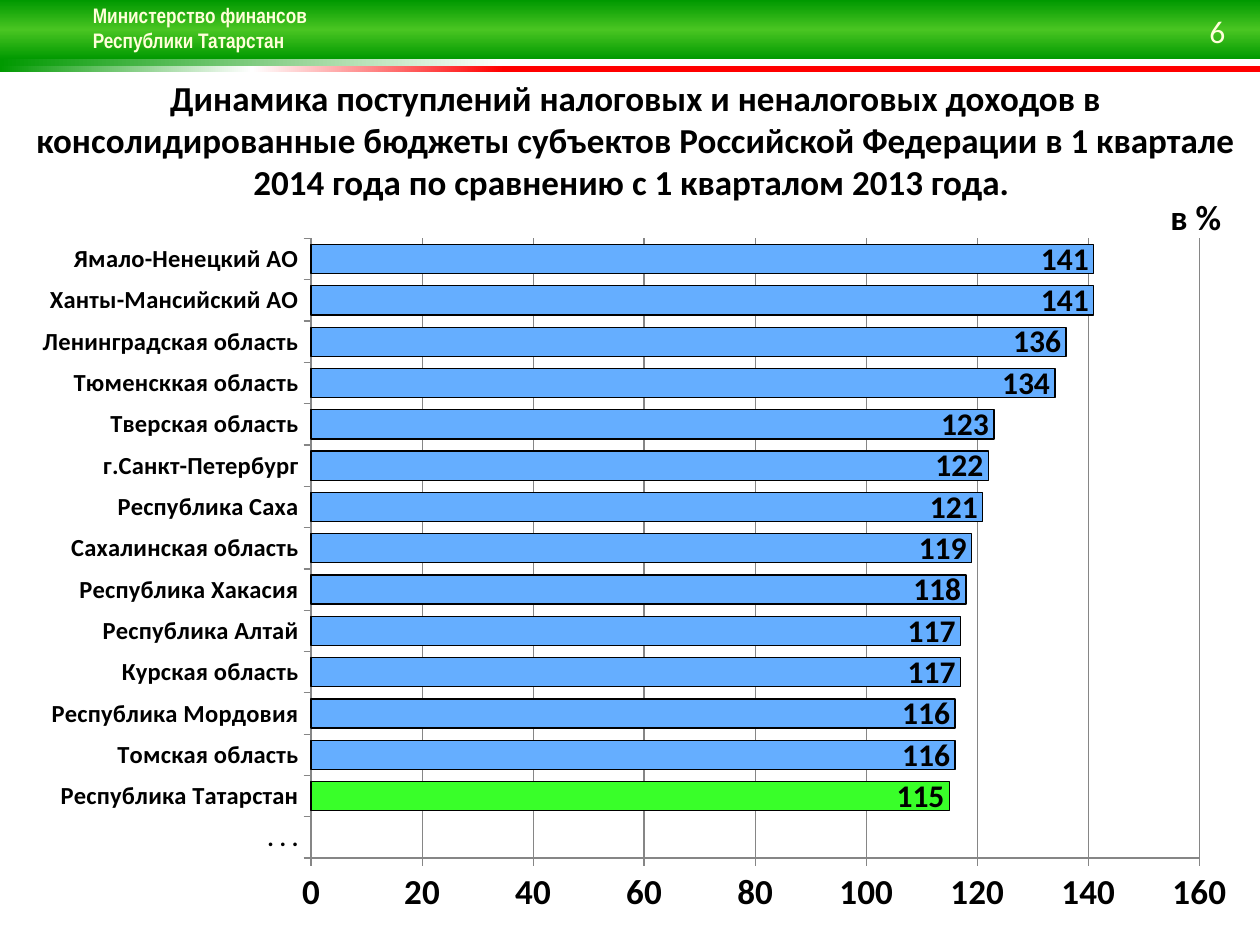
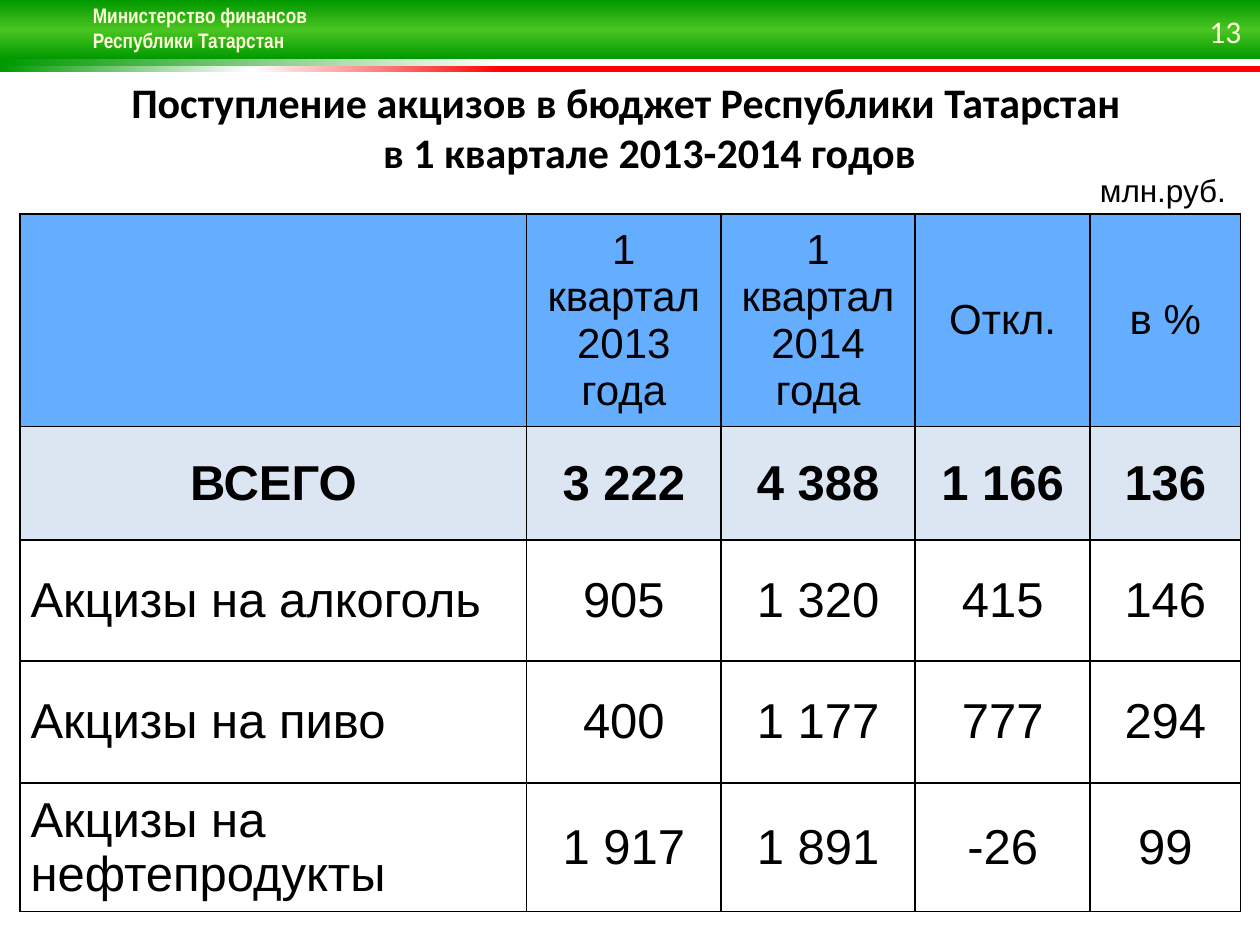
from dataclasses import dataclass

from lxml import etree
from pptx import Presentation
from pptx.chart.data import CategoryChartData
from pptx.dml.color import RGBColor
from pptx.enum.chart import XL_CHART_TYPE, XL_LABEL_POSITION, XL_TICK_LABEL_POSITION, XL_TICK_MARK
from pptx.enum.shapes import MSO_SHAPE
from pptx.enum.text import MSO_ANCHOR, PP_ALIGN
from pptx.oxml import parse_xml
from pptx.oxml.ns import nsdecls, qn
from pptx.util import Pt

RECT = MSO_SHAPE.RECTANGLE
BAR = XL_CHART_TYPE.BAR_STACKED
INSIDE_END = XL_LABEL_POSITION.INSIDE_END
LOW = XL_TICK_LABEL_POSITION.LOW
TICK_OUT, TICK_NONE = XL_TICK_MARK.OUTSIDE, XL_TICK_MARK.NONE
LEFT, CENTER = PP_ALIGN.LEFT, PP_ALIGN.CENTER
MIDDLE = MSO_ANCHOR.MIDDLE


@dataclass(frozen=True)
class Theme:
    black: str = "000000"
    white: str = "FFFFFF"
    cream: str = "FFFFD9"
    green: str = "009900"
    lime: str = "49C522"
    red: str = "FF0000"
    blue: str = "65AEFF"
    pale: str = "DCE6F2"
    accent: str = "39FF29"
    grid: str = "868686"
    sans: str = "Calibri"
    body: str = "Arial"
    narrow: str = "Arial Narrow"
    tiny: int = 12
    small: int = 14
    normal: int = 18
    large: int = 20
    head: int = 24
    figure: int = 28


class Deck:
    def __init__(self, theme):
        self.t = theme
        self.prs = Presentation()
        self.prs.slide_width, self.prs.slide_height = Pt(720), Pt(540)
        self.s = None

    def style(self, font, size, color=None, bold=False, name=None):
        font.name = name or self.t.sans
        font.size = Pt(size)
        font.bold = bold
        font.color.rgb = RGBColor.from_string(color or self.t.black)

    def slide(self, number):
        t = self.t
        self.s = self.prs.slides.add_slide(self.prs.slide_layouts[6])
        self.band(34, 3.6, 180, [(0, t.white), (60, t.white), (100, t.green)])
        self.band(37.6, 3.6, 180, [(60, t.red), (80, t.white), (100, t.green)])
        self.band(0, 34, 270, [(0, t.green), (50, t.lime), (100, t.green)])
        p = self.text("Министерство финансов\vРеспублики Татарстан", 46, -2, 138, 51,
                      t.tiny, t.cream, True, t.narrow)
        for r in p.runs:
            self.text_shadow(r)
        self.text(str(number), 684, 3.6, 34, 24.5, t.normal, t.cream, hang=27)

    def band(self, y, h, angle, stops):
        sp = self.s.shapes.add_shape(RECT, 0, Pt(y), Pt(720), Pt(h))
        sp.shadow.inherit = False
        sp.line.fill.background()
        sp.fill.gradient()
        sp.fill.gradient_angle = angle
        stop_list = sp._element.spPr.find(".//" + qn("a:gsLst"))
        for stop in list(stop_list):
            stop_list.remove(stop)
        for pos, color in stops:
            stop = etree.SubElement(stop_list, qn("a:gs"), pos=str(pos * 1000))
            etree.SubElement(stop, qn("a:srgbClr"), val=color)

    def text_shadow(self, r):
        fill = r._r.get_or_add_rPr().find(qn("a:solidFill"))
        fill.addnext(parse_xml(
            f'<a:effectLst {nsdecls("a")}><a:outerShdw blurRad="38100" dist="38100" dir="2700000">'
            f'<a:srgbClr val="{self.t.black}"><a:alpha val="60000"/></a:srgbClr>'
            '</a:outerShdw></a:effectLst>'))

    def text(self, text, x, y, w, h, size, color=None, bold=False, name=None,
             align=LEFT, margin=0, hang=0, wrap=True):
        tf = self.s.shapes.add_textbox(Pt(x), Pt(y), Pt(w), Pt(h)).text_frame
        tf.word_wrap = wrap
        p = tf.paragraphs[0]
        p.text = text
        p.alignment = align
        if margin or hang:
            pPr = p._p.get_or_add_pPr()
            pPr.set("marL", str(Pt(margin or hang)))
            pPr.set("indent", str(Pt(-hang)))
        for r in p.runs:
            self.style(r.font, size, color, bold, name)
        return p

    def title(self, text, x, w, h, size, **indents):
        self.text(text, x, 40, w, h, size, bold=True, align=CENTER, **indents)

    def axis(self, axis, size):
        axis.major_tick_mark, axis.minor_tick_mark = TICK_OUT, TICK_NONE
        axis.tick_label_position = LOW
        axis.format.line.color.rgb = RGBColor.from_string(self.t.grid)
        self.style(axis.tick_labels.font, size, bold=True)

    def bar_chart(self, rows, highlighted, x, y, w, h, plot):
        t = self.t
        data = CategoryChartData(number_format="0")
        data.categories = [name for name, _ in rows]
        data.add_series("Series 1", [value for _, value in rows])
        chart = self.s.shapes.add_chart(BAR, Pt(x), Pt(y), Pt(w), Pt(h), data).chart
        chart.has_title = chart.has_legend = False
        self.style(chart.font, t.normal)

        self.axis(chart.category_axis, t.small)
        values = chart.value_axis
        self.axis(values, t.large)
        values.minimum_scale, values.maximum_scale, values.major_unit = 0, 160, 20
        values.tick_labels.number_format = "0"
        values.tick_labels.number_format_is_linked = False
        values.major_gridlines.format.line.color.rgb = RGBColor.from_string(t.grid)

        bars = chart.plots[0]
        bars.gap_width, bars.overlap = 42, 100
        bars.vary_by_categories = False
        series = bars.series[0]
        self.bar_format(series.format, t.blue)
        for i in highlighted:
            self.bar_format(series.points[i].format, t.accent)
        labels = series.data_labels
        labels.show_value = True
        labels.position = INSIDE_END
        labels.number_format, labels.number_format_is_linked = "0", False
        self.style(labels.font, t.normal, bold=True)
        self.plot_layout(chart, plot)

    def bar_format(self, fmt, color):
        fmt.fill.solid()
        fmt.fill.fore_color.rgb = RGBColor.from_string(color)
        fmt.line.color.rgb = RGBColor.from_string(self.t.black)
        fmt.line.width = Pt(0.75)

    def plot_layout(self, chart, plot):
        area = chart._chartSpace.find(".//" + qn("c:plotArea"))
        for old in area.findall(qn("c:layout")):
            area.remove(old)
        layout = etree.Element(qn("c:layout"))
        manual = etree.SubElement(layout, qn("c:manualLayout"))
        fields = [("layoutTarget", "inner"), ("xMode", "edge"), ("yMode", "edge")]
        for tag, val in fields + list(zip("xywh", plot)):
            etree.SubElement(manual, qn("c:" + tag), val=str(val))
        area.insert(0, layout)

    def table(self, rows, x, y, widths, heights):
        t = self.t
        frame = self.s.shapes.add_table(len(rows), len(widths), Pt(x), Pt(y),
                                        Pt(sum(widths)), Pt(sum(heights)))
        table = frame.table
        table.first_row = table.horz_banding = False
        for column, width in zip(table.columns, widths):
            column.width = Pt(width)
        for row, height in zip(table.rows, heights):
            row.height = Pt(height)
        fills = {0: t.blue, 1: t.pale}
        for i, row in enumerate(rows):
            for j, text in enumerate(row):
                self.cell(table.cell(i, j), text, fills.get(i),
                          t.figure if i else t.head, i == 1,
                          LEFT if i > 1 and j == 0 else CENTER)

    def cell(self, cell, text, fill, size, bold, align):
        cell.vertical_anchor = MIDDLE
        cell.margin_left = cell.margin_right = Pt(6)
        cell.margin_top = cell.margin_bottom = Pt(3)
        p = cell.text_frame.paragraphs[0]
        p.text = text
        p.alignment = align
        for r in p.runs:
            self.style(r.font, size, bold=bold, name=self.t.body)
        tcPr = cell._tc.get_or_add_tcPr()
        for side in ("lnL", "lnR", "lnT", "lnB"):
            ln = etree.SubElement(tcPr, qn("a:" + side), w=str(Pt(1)))
            solid = etree.SubElement(ln, qn("a:solidFill"))
            etree.SubElement(solid, qn("a:srgbClr"), val=self.t.black)
        if fill:
            cell.fill.solid()
            cell.fill.fore_color.rgb = RGBColor.from_string(fill)
        else:
            cell.fill.background()


REGIONS = [
    (". . .", None),
    ("Республика Татарстан", 115),
    ("Томская область", 116),
    ("Республика Мордовия", 116),
    ("Курская область", 117),
    ("Республика Алтай", 117),
    ("Республика Хакасия", 118),
    ("Сахалинская область", 119),
    ("Республика Саха", 121),
    ("г.Санкт-Петербург", 122),
    ("Тверская область", 123),
    ("Тюменсккая область", 134),
    ("Ленинградская область", 136),
    ("Ханты-Мансийский АО", 141),
    ("Ямало-Ненецкий АО", 141),
]

EXCISES = [
    ("", "1 квартал 2013 года", "1 квартал 2014 года", "Откл.", "в %"),
    ("ВСЕГО", "3 222", "4 388", "1 166", "136"),
    ("Акцизы на алкоголь", "905", "1 320", "415", "146"),
    ("Акцизы на пиво", "400", "1 177", "777", "294"),
    ("Акцизы на нефтепродукты", "1 917", "1 891", "-26", "99"),
]


def main():
    t = Theme()
    deck = Deck(t)

    deck.slide(6)
    deck.bar_chart(REGIONS, (0, 1), 8.6, 128.2, 705, 402.5, (0.24, 0.02, 0.72, 0.88))
    deck.title("Динамика поступлений налоговых и неналоговых доходов в консолидированные "
               "бюджеты субъектов Российской Федерации в 1 квартале 2014 года "
               "по сравнению с 1 кварталом 2013 года. ", 0, 720, 88.6, t.large, margin=6.5)
    deck.text("в %", 661.7, 108, 44, 31.7, t.large, bold=True, wrap=False)

    deck.slide(13)
    deck.title("Поступление акцизов в бюджет Республики Татарстан \v"
               "в 1 квартале 2013-2014 годов ", 11.5, 697.7, 54.7, t.head, hang=27)
    deck.text("млн.руб.", 621.4, 94.3, 87, 28.8, t.normal, name=t.body, wrap=False)
    deck.table(EXCISES, 11.5, 122.4, (289.5, 111, 111, 100, 86), (121, 65, 69, 70, 73))

    deck.prs.save("out.pptx")


if __name__ == "__main__":
    main()
